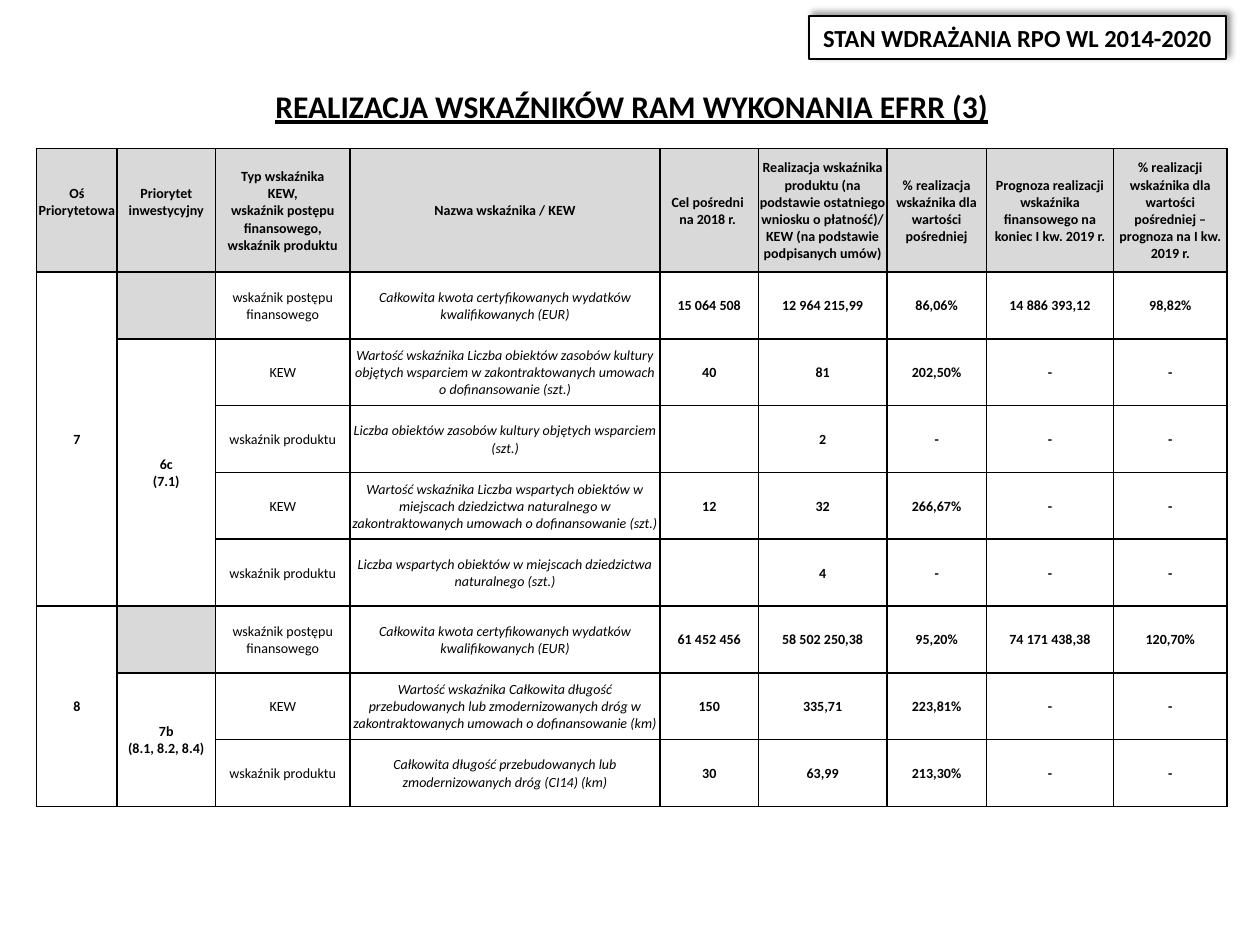
import pptx
import pptx.dml.color
import pptx.enum.shapes
import pptx.enum.text
import pptx.util
from lxml import etree
from pptx.oxml.ns import qn

Inches, Pt = pptx.util.Inches, pptx.util.Pt
BLACK = pptx.dml.color.RGBColor(0x00, 0x00, 0x00)
WHITE = pptx.dml.color.RGBColor(0xFF, 0xFF, 0xFF)
GREY = pptx.dml.color.RGBColor(0xD9, 0xD9, 0xD9)
FONT = "Calibri"

BADGE = "STAN WDRAŻANIA RPO WL 2014-2020"
TITLE = "REALIZACJA WSKAŹNIKÓW RAM WYKONANIA EFRR (3)"

# "\v" is a line break inside a paragraph
HEADER = (
    "Oś Priorytetowa\v",
    "Priorytet inwestycyjny\v",
    "Typ wskaźnika\vKEW,\vwskaźnik postępu finansowego,\vwskaźnik produktu",
    "Nazwa wskaźnika / KEW",
    "Cel pośredni \vna 2018 r. ",
    "Realizacja wskaźnika produktu (na podstawie ostatniego wniosku o płatność)/ "
    "KEW (na podstawie podpisanych umów)",
    "% realizacja wskaźnika dla wartości pośredniej",
    "Prognoza realizacji wskaźnika finansowego na koniec I kw. 2019 r.",
    "% realizacji wskaźnika dla wartości pośredniej – prognoza na I kw. 2019 r.",
)
FINANCIAL, KEY_STEP, PRODUCT = "wskaźnik postępu finansowego", "KEW", "wskaźnik produktu"
CERTIFIED = "Całkowita kwota certyfikowanych wydatków kwalifikowanych (EUR)"

# Each axis: number, investment priority, indicators; the first indicator is financial
AXES = (
    ("7", "6c\v(7.1)", (
        (FINANCIAL, CERTIFIED,
         "15 064 508", "12 964 215,99", "86,06%", "14 886 393,12", "98,82%"),
        (KEY_STEP, "Wartość wskaźnika Liczba obiektów zasobów kultury objętych wsparciem "
         "w zakontraktowanych umowach o dofinansowanie (szt.)",
         "40", "81", "202,50%", "-", "-"),
        (PRODUCT, "Liczba obiektów zasobów kultury objętych wsparciem (szt.)",
         "", "2", "-", "-", "-"),
        (KEY_STEP, "Wartość wskaźnika Liczba wspartych obiektów w miejscach dziedzictwa "
         "naturalnego w zakontraktowanych umowach o dofinansowanie (szt.)",
         "12", "32", "266,67%", "-", "-"),
        (PRODUCT, "Liczba wspartych obiektów w miejscach dziedzictwa naturalnego (szt.)",
         "", "4", "-", "-", "-"),
    )),
    ("8", "7b\v(8.1, 8.2, 8.4)", (
        (FINANCIAL, CERTIFIED,
         "61 452 456", "58 502 250,38", "95,20%", "74 171 438,38", "120,70%"),
        (KEY_STEP, "Wartość wskaźnika Całkowita długość przebudowanych lub zmodernizowanych "
         "dróg w zakontraktowanych umowach o dofinansowanie (km)",
         "150", "335,71", "223,81%", "-", "-"),
        (PRODUCT, "Całkowita długość przebudowanych lub zmodernizowanych dróg (CI14) (km)",
         "30", "63,99", "213,30%", "-", "-"),
    )),
)

COLUMN_WIDTHS = (0.64, 0.78, 1.07, 2.46, 0.78, 1.02, 0.79, 1.01, 0.9)
HEADER_HEIGHT, ROW_HEIGHT = 0.98, 0.53
LEFT, TABLE_TOP = 0.29, 1.18
TYPE_COLUMN, NAME_COLUMN = 2, 3


def write(frame, text, size, bold=True, italic=False, underline=None):
    frame.text = text
    para = frame.paragraphs[0]
    para.alignment = pptx.enum.text.PP_ALIGN.CENTER
    font = para.font
    font.name, font.size, font.color.rgb = FONT, Pt(size), BLACK
    font.bold, font.italic, font.underline = bold, italic, underline
    return para


def add_solid_fill(parent, color, alpha=None):
    fill = etree.SubElement(parent, qn("a:solidFill")) if alpha is None else parent
    tint = etree.SubElement(fill, qn("a:srgbClr"), val=str(color))
    if alpha is not None:
        etree.SubElement(tint, qn("a:alpha"), val=str(alpha * 1000))


def add_borders(cell):
    properties = cell._tc.get_or_add_tcPr()
    for side in ("a:lnL", "a:lnR", "a:lnT", "a:lnB"):
        line = etree.SubElement(properties, qn(side), w=str(Pt(1)))
        add_solid_fill(line, BLACK)


def add_title(slide):
    title = slide.shapes.title
    title.left, title.top = Inches(LEFT), Inches(0.6)
    title.width, title.height = Inches(sum(COLUMN_WIDTHS)), Inches(0.45)
    frame = title.text_frame
    frame.word_wrap = True
    frame.vertical_anchor = pptx.enum.text.MSO_ANCHOR.TOP
    frame.auto_size = pptx.enum.text.MSO_AUTO_SIZE.SHAPE_TO_FIT_TEXT
    write(frame, TITLE, 18, underline=True).line_spacing = 1.14


def add_badge(slide):
    badge = slide.shapes.add_shape(
        pptx.enum.shapes.MSO_SHAPE.RECTANGLE,
        Inches(6.42), Inches(0.13), Inches(3.31), Inches(0.34))
    badge.fill.solid()
    badge.fill.fore_color.rgb = WHITE
    badge.line.color.rgb = BLACK
    badge.line.width = Pt(1)
    badge.shadow.inherit = False
    effects = badge._element.spPr.find(qn("a:effectLst"))
    shadow = etree.SubElement(
        effects, qn("a:outerShdw"), blurRad=str(Pt(4)), dist=str(Pt(3)),
        dir=str(315 * 60000), algn="bl", rotWithShape="0")
    add_solid_fill(shadow, BLACK, alpha=40)
    frame = badge.text_frame
    frame.word_wrap = False
    frame.auto_size = pptx.enum.text.MSO_AUTO_SIZE.SHAPE_TO_FIT_TEXT
    write(frame, BADGE, 14)


def fill_cell(cell, text, color=WHITE, bold=True, italic=False):
    cell.vertical_anchor = pptx.enum.text.MSO_ANCHOR.MIDDLE
    cell.margin_left = cell.margin_right = cell.margin_top = Inches(0.01)
    cell.margin_bottom = 0
    if color is None:
        cell.fill.background()
    else:
        cell.fill.solid()
        cell.fill.fore_color.rgb = color
    write(cell.text_frame, text, 8, bold, italic)


def add_indicator_table(slide):
    row_count = 1 + sum(len(indicators) for _, _, indicators in AXES)
    height = HEADER_HEIGHT + ROW_HEIGHT * (row_count - 1)
    table = slide.shapes.add_table(
        row_count, len(COLUMN_WIDTHS), Inches(LEFT), Inches(TABLE_TOP),
        Inches(sum(COLUMN_WIDTHS)), Inches(height)).table
    table.first_row = table.horz_banding = False
    for column, width in zip(table.columns, COLUMN_WIDTHS):
        column.width = Inches(width)
    for index, row in enumerate(table.rows):
        row.height = Inches(ROW_HEIGHT if index else HEADER_HEIGHT)
    for cell in table.iter_cells():
        add_borders(cell)

    for column, text in enumerate(HEADER):
        fill_cell(table.cell(0, column), text, GREY)

    first = 1
    for axis, priority, indicators in AXES:
        last = first + len(indicators) - 1
        table.cell(first, 0).merge(table.cell(last, 0))
        table.cell(first + 1, 1).merge(table.cell(last, 1))
        fill_cell(table.cell(first, 0), axis, None)
        fill_cell(table.cell(first, 1), "", GREY)
        fill_cell(table.cell(first + 1, 1), priority, None)
        for row, indicator in enumerate(indicators, first):
            for column, text in enumerate(indicator, TYPE_COLUMN):
                fill_cell(table.cell(row, column), text,
                          bold=column > NAME_COLUMN, italic=column == NAME_COLUMN)
        first = last + 1


def main():
    deck = pptx.Presentation()
    deck.slide_width, deck.slide_height = Inches(10), Inches(7.5)
    slide = deck.slides.add_slide(deck.slide_layouts.get_by_name("Title Only"))
    add_title(slide)
    add_badge(slide)
    add_indicator_table(slide)
    deck.save("out.pptx")


if __name__ == "__main__":
    main()
